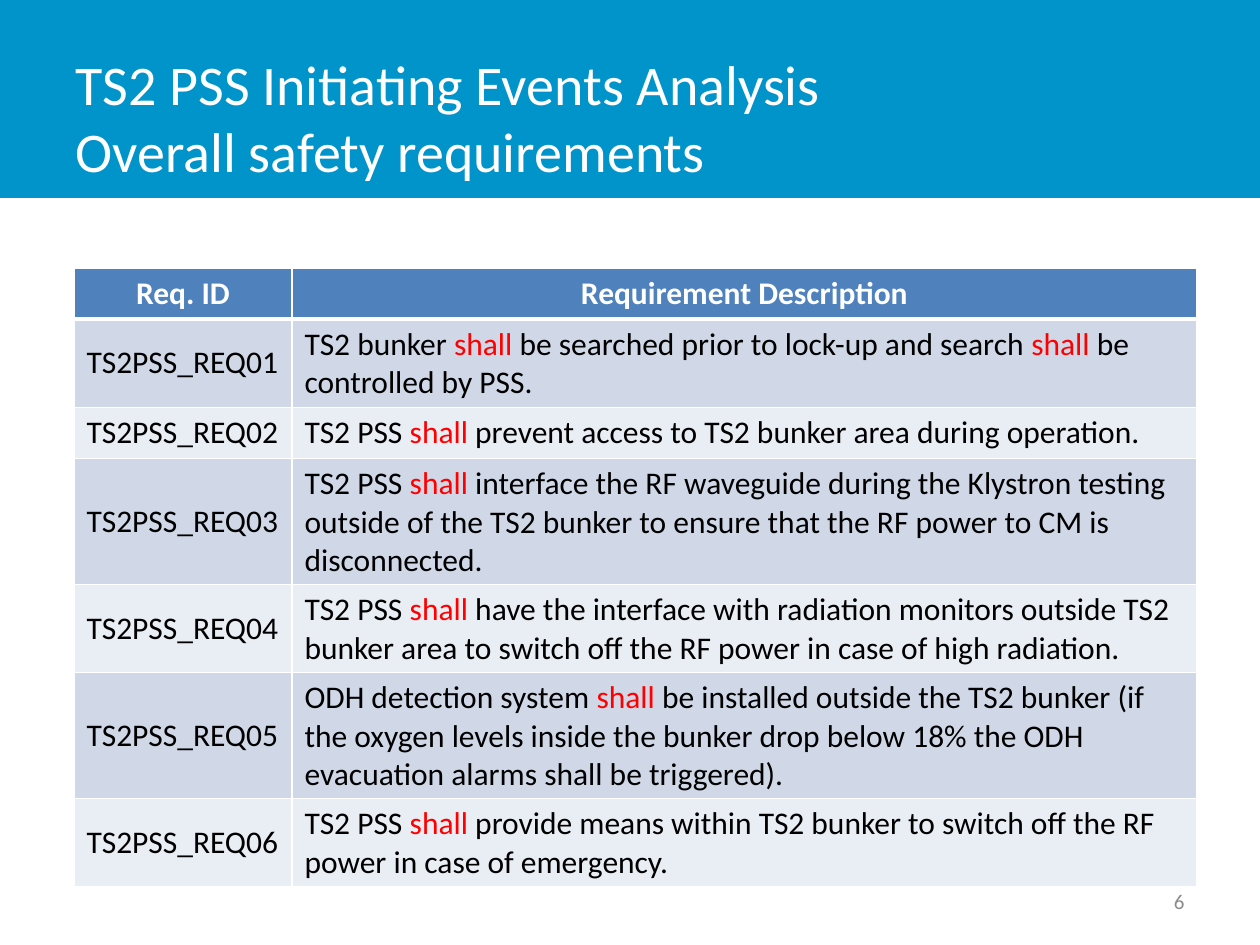
from lxml.etree import SubElement
from pptx import Presentation
from pptx.dml.color import RGBColor
from pptx.enum.shapes import MSO_SHAPE
from pptx.enum.text import MSO_ANCHOR, MSO_AUTO_SIZE, PP_ALIGN
from pptx.oxml.ns import qn
from pptx.util import Pt

TITLE = ["TS2 PSS Initiating Events Analysis", "Overall safety requirements"]
PAGE_NUMBER = "6"
HEADERS = ["Req. ID", "Requirement Description"]
# Text between asterisks is highlighted.
REQUIREMENTS = [
    ("TS2PSS_REQ01", "TS2 bunker *shall *be searched prior to lock-up and search "
                     "*shall* be controlled by PSS."),
    ("TS2PSS_REQ02", "TS2 PSS *shall *prevent access to TS2 bunker area during operation."),
    ("TS2PSS_REQ03", "TS2 PSS *shall* interface the RF waveguide during the Klystron testing "
                     "outside of the TS2 bunker to ensure that the RF power to CM is disconnected."),
    ("TS2PSS_REQ04", "TS2 PSS *shall* have the interface with radiation monitors outside TS2 "
                     "bunker area to switch off the RF power in case of high radiation."),
    ("TS2PSS_REQ05", "ODH detection system *shall *be installed outside the TS2 bunker (if the "
                     "oxygen levels inside the bunker drop below 18% the ODH evacuation alarms "
                     "shall be triggered)."),
    ("TS2PSS_REQ06", "TS2 PSS *shall* provide means within TS2 bunker to switch off the RF "
                     "power in case of emergency."),
]

FONT = "Calibri"
WHITE = RGBColor(0xFF, 0xFF, 0xFF)
BLACK = RGBColor(0x00, 0x00, 0x00)
RED = RGBColor(0xFF, 0x00, 0x00)
GREY = RGBColor(0x8C, 0x8C, 0x8C)
BAND_BLUE = RGBColor(0x00, 0x94, 0xCA)
HEADER_BLUE = RGBColor(0x4F, 0x81, 0xBD)
ROW_FILLS = [RGBColor(0xD0, 0xD8, 0xE8), RGBColor(0xE9, 0xED, 0xF4)]

EMU_PER_PX = 914400 / 126
COLUMN_WIDTHS = [218, 905]
ROW_HEIGHT = 51


def px(*values):
    return [round(value * EMU_PER_PX) for value in values]


def add_run(para, text, size, color, bold=False):
    span = para.add_run()
    span.text = text
    span.font.name = FONT
    span.font.size = Pt(size)
    span.font.bold = bold
    span.font.color.rgb = color


def set_borders(cell, widths):
    properties = cell._tc.get_or_add_tcPr()
    for side, width in zip("LRTB", widths):
        line = SubElement(properties, qn(f"a:ln{side}"), w=str(Pt(width)))
        fill = SubElement(line, qn("a:solidFill"))
        SubElement(fill, qn("a:srgbClr"), val=str(WHITE))


def fill_cell(cell, text, row, column):
    header = row == 0
    set_borders(cell, [1, 1, 3 if row == 1 else 1, 3 if header else 1])
    cell.fill.solid()
    cell.fill.fore_color.rgb = HEADER_BLUE if header else ROW_FILLS[(row - 1) % 2]
    para = cell.text_frame.paragraphs[0]
    if header:
        para.alignment = PP_ALIGN.CENTER
    elif column == 0:
        cell.vertical_anchor = MSO_ANCHOR.MIDDLE
    for index, part in enumerate(text.split("*")):
        color = WHITE if header else RED if index % 2 else BLACK
        add_run(para, part, 18, color, bold=header)


def add_band(slide):
    band = slide.shapes.add_shape(MSO_SHAPE.RECTANGLE, *px(0, 0, 1260, 198))
    band.shadow.inherit = False
    band.fill.solid()
    band.fill.fore_color.rgb = BAND_BLUE
    band.line.fill.background()


def format_title(slide):
    title = slide.shapes.title
    slide.shapes._spTree.append(title._element)
    title.left, title.top, title.width, title.height = px(63, 38, 984, 157)
    frame = title.text_frame
    frame.word_wrap = True
    frame.auto_size = MSO_AUTO_SIZE.NONE
    frame.vertical_anchor = MSO_ANCHOR.MIDDLE
    para = frame.paragraphs[0]
    para.alignment = PP_ALIGN.LEFT
    for index, text in enumerate(TITLE):
        if index:
            para.add_line_break()
        add_run(para, text, 32, WHITE)


def add_page_number(slide):
    box = slide.shapes.add_textbox(*px(903, 876, 294, 50))
    box.text_frame.word_wrap = True
    box.text_frame.vertical_anchor = MSO_ANCHOR.MIDDLE
    para = box.text_frame.paragraphs[0]
    para.alignment = PP_ALIGN.RIGHT
    add_run(para, PAGE_NUMBER, 12, GREY)


def add_requirements(slide):
    rows = [HEADERS, *REQUIREMENTS]
    area = px(74, 268, sum(COLUMN_WIDTHS), ROW_HEIGHT * len(rows))
    table = slide.shapes.add_table(len(rows), len(HEADERS), *area).table
    for column, width in zip(table.columns, px(*COLUMN_WIDTHS)):
        column.width = width
    for row, texts in enumerate(rows):
        for column, text in enumerate(texts):
            fill_cell(table.cell(row, column), text, row, column)


def main():
    deck = Presentation()
    deck.slide_width, deck.slide_height = px(1260, 945)
    slide = deck.slides.add_slide(deck.slide_layouts[5])
    add_band(slide)
    format_title(slide)
    add_page_number(slide)
    add_requirements(slide)
    deck.save("out.pptx")


if __name__ == "__main__":
    main()
